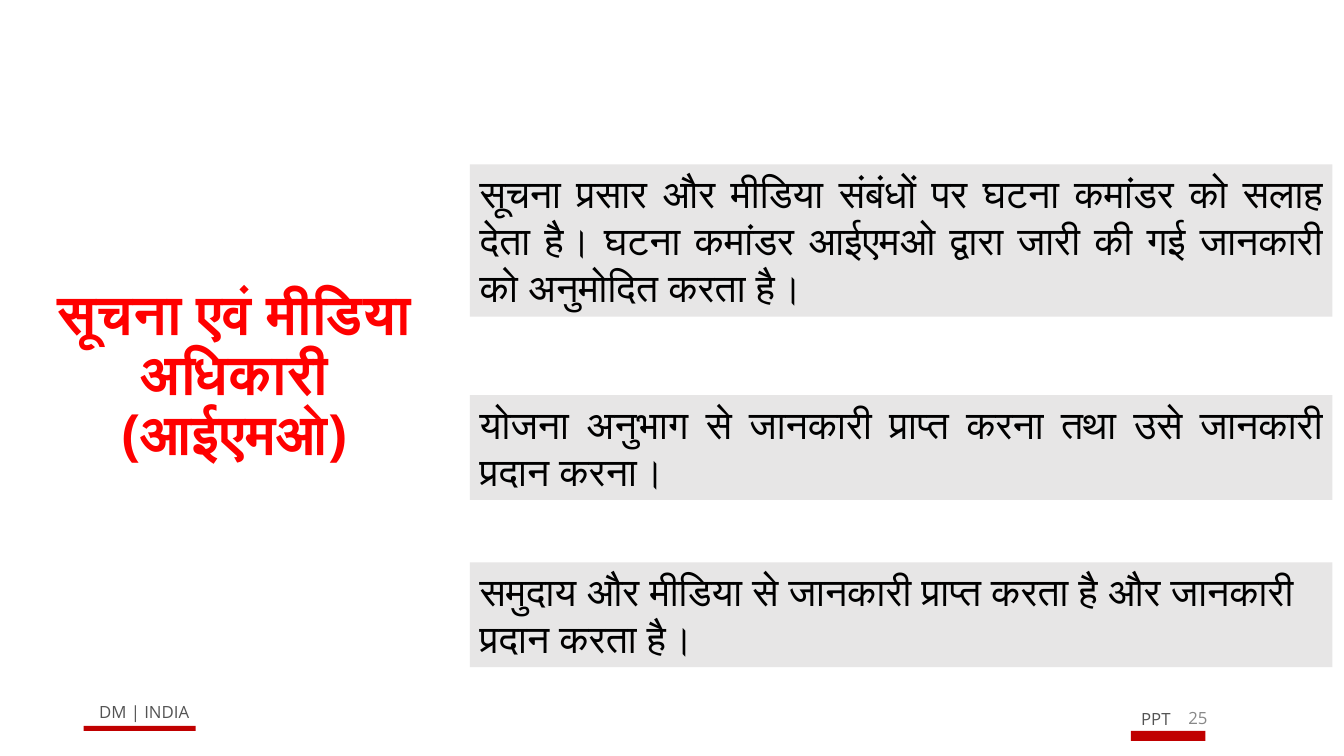
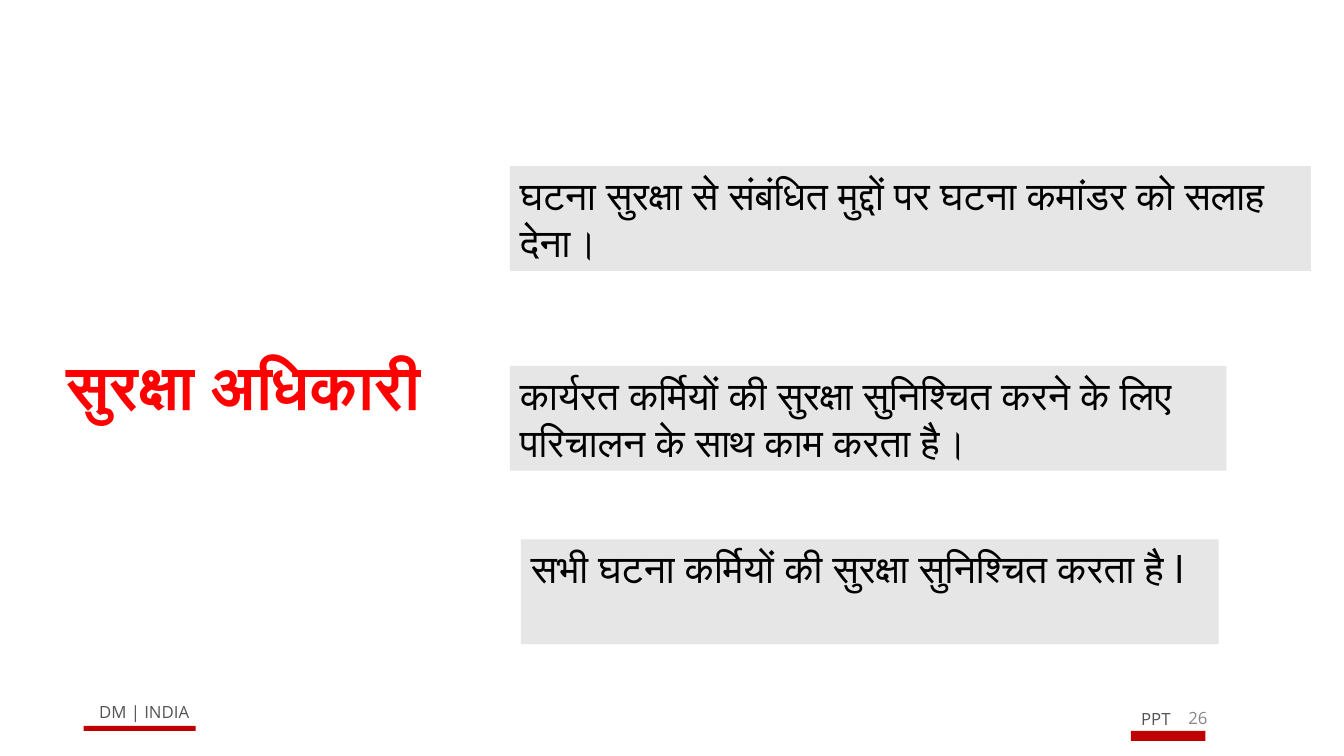
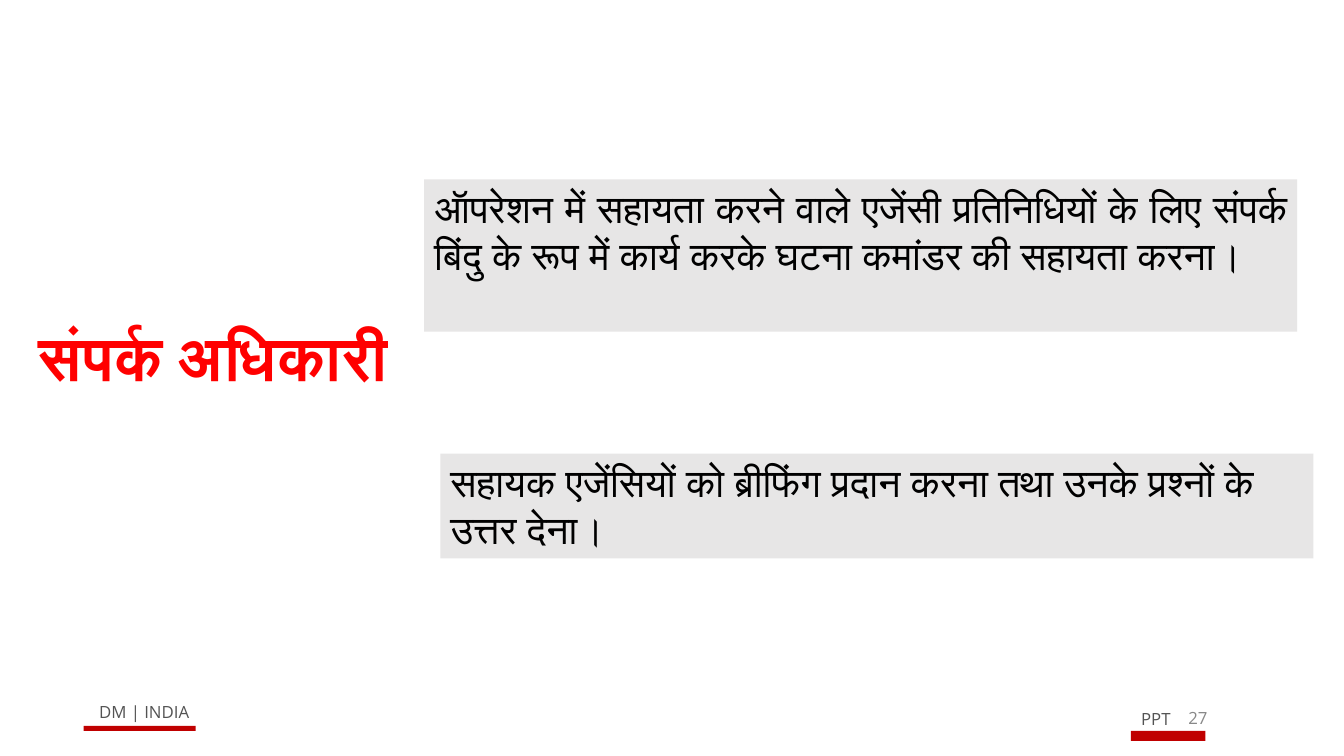
from dataclasses import dataclass

from lxml import etree
from pptx import Presentation
from pptx.dml.color import RGBColor
from pptx.enum import lang, shapes, text
from pptx.oxml import ns
from pptx.util import Cm, Pt


@dataclass(frozen=True)
class Theme:
    font: str = "Open Sans"
    heading: str = "FF0000"
    body: str = "000000"
    panel: str = "E7E6E6"
    band: str = "C00000"
    footer: str = "535353"
    number: str = "888888"
    heading_size: float = 44
    long_heading_size: float = 39.6
    body_size: float = 28
    footer_size: float = 12


THEME = Theme()
LEFT, CENTER, RIGHT, JUSTIFY = (
    text.PP_ALIGN.LEFT, text.PP_ALIGN.CENTER, text.PP_ALIGN.RIGHT, text.PP_ALIGN.JUSTIFY)
TOP, MIDDLE = text.MSO_ANCHOR.TOP, text.MSO_ANCHOR.MIDDLE
FIRST_NUMBER = 25
TWO_LINES, THREE_LINES = 2.64, 3.84

# Places are left, top, width, height in centimetres.
SLIDES = [
    dict(
        title="सूचना एवं मीडिया अधिकारी (आईएमओ)",
        title_place=(0.28, 7.21, 11.25, 4.55),
        title_size=THEME.long_heading_size,
        panels=[
            ("सूचना प्रसार और मीडिया संबंधों पर घटना कमांडर को सलाह देता है। "
             "घटना कमांडर आईएमओ द्वारा जारी की गई जानकारी को अनुमोदित करता है।",
             (11.84, 4.14, 21.74, THREE_LINES), JUSTIFY),
            ("योजना अनुभाग से जानकारी प्राप्त करना तथा उसे जानकारी प्रदान करना।",
             (11.84, 9.96, 21.74, TWO_LINES), JUSTIFY),
            ("समुदाय और मीडिया से जानकारी प्राप्त करता है और जानकारी प्रदान करता है।",
             (11.84, 14.17, 21.74, TWO_LINES), LEFT),
        ],
    ),
    dict(
        title="सुरक्षा अधिकारी",
        title_place=(0.46, 7.39, 11.35, 4.83),
        title_size=THEME.heading_size,
        panels=[
            ("घटना सुरक्षा से संबंधित मुद्दों पर घटना कमांडर को सलाह देना।",
             (12.85, 4.19, 20.19, TWO_LINES), LEFT),
            ("कार्यरत कर्मियों की सुरक्षा सुनिश्चित करने के लिए परिचालन के साथ काम करता है।",
             (12.85, 9.22, 18.06, TWO_LINES), LEFT),
            ("सभी घटना कर्मियों की सुरक्षा सुनिश्चित करता है I",
             (13.13, 13.59, 17.58, TWO_LINES), LEFT),
        ],
    ),
    dict(
        title="संपर्क अधिकारी",
        title_place=(0.61, 7.09, 9.53, 4.01),
        title_size=THEME.heading_size,
        panels=[
            ("ऑपरेशन में सहायता करने वाले एजेंसी प्रतिनिधियों के लिए संपर्क बिंदु "
             "के रूप में कार्य करके घटना कमांडर की सहायता करना।",
             (10.69, 4.52, 22, THREE_LINES), JUSTIFY),
            ("सहायक एजेंसियों को ब्रीफिंग प्रदान करना तथा उनके प्रश्नों के उत्तर देना।",
             (11.1, 11.43, 22, TWO_LINES), LEFT),
        ],
    ),
]


def lengths(place):
    return [Cm(value) for value in place]


def write(box, words, *, size, color, align=LEFT, anchor=TOP, bold=False,
          spacing=None, inset=(0.25, 0.13), language=lang.MSO_LANGUAGE_ID.HINDI):
    """Fill a shape with one formatted paragraph."""
    frame = box.text_frame
    frame.word_wrap = True
    frame.auto_size = text.MSO_AUTO_SIZE.NONE
    frame.vertical_anchor = anchor
    frame.margin_left = frame.margin_right = Cm(inset[0])
    frame.margin_top = frame.margin_bottom = Cm(inset[1])
    para = frame.paragraphs[0]
    para.alignment = align
    para.line_spacing = spacing
    span = para.add_run()
    span.text = words
    span.font.size = Pt(size)
    span.font.bold = bold
    span.font.color.rgb = RGBColor.from_string(color)
    span.font.language_id = language
    span.font.name = THEME.font
    # Devanagari takes its typeface from the complex-script slot.
    etree.SubElement(span._r.get_or_add_rPr(), ns.qn("a:cs"), typeface=THEME.font)


def add_block(page, place, color):
    """Add a plain filled rectangle."""
    block = page.shapes.add_shape(shapes.MSO_SHAPE.RECTANGLE, *lengths(place))
    block.shadow.inherit = False
    block.fill.solid()
    block.fill.fore_color.rgb = RGBColor.from_string(color)
    block.line.fill.background()
    return block


def add_label(page, words, place, **style):
    box = page.shapes.add_textbox(*lengths(place))
    write(box, words, size=THEME.footer_size,
          language=lang.MSO_LANGUAGE_ID.ENGLISH_US, **style)


def add_footer(page, number):
    footer = dict(color=THEME.footer, align=CENTER, inset=(0.23, 0.23))
    add_label(page, "DM | INDIA", (0.61, 17.45, 6.05, 0.94), **footer)
    add_block(page, (2.11, 18.29, 2.82, 0.13), THEME.band)
    add_label(page, "PPT", (28.37, 17.63, 1.52, 0.94), **footer)
    add_block(page, (28.5, 18.42, 1.88, 0.25), THEME.band)
    add_label(page, str(number), (29.41, 17.58, 1.27, 1.02),
              color=THEME.number, align=RIGHT, anchor=MIDDLE)


def set_title(page, words, place, size):
    title = page.shapes.title
    title.left, title.top, title.width, title.height = lengths(place)
    write(title, words, size=size, color=THEME.heading, align=CENTER,
          anchor=MIDDLE, bold=True, spacing=0.9)


def add_panel(page, words, place, align):
    panel = add_block(page, place, THEME.panel)
    write(panel, words, size=THEME.body_size, color=THEME.body, align=align)


def main():
    deck = Presentation()
    deck.slide_width, deck.slide_height = Cm(33.87), Cm(19.05)
    title_only = deck.slide_layouts[5]
    for number, content in enumerate(SLIDES, FIRST_NUMBER):
        page = deck.slides.add_slide(title_only)
        set_title(page, content["title"], content["title_place"], content["title_size"])
        for words, place, align in content["panels"]:
            add_panel(page, words, place, align)
        add_footer(page, number)
    deck.save("out.pptx")


if __name__ == "__main__":
    main()
